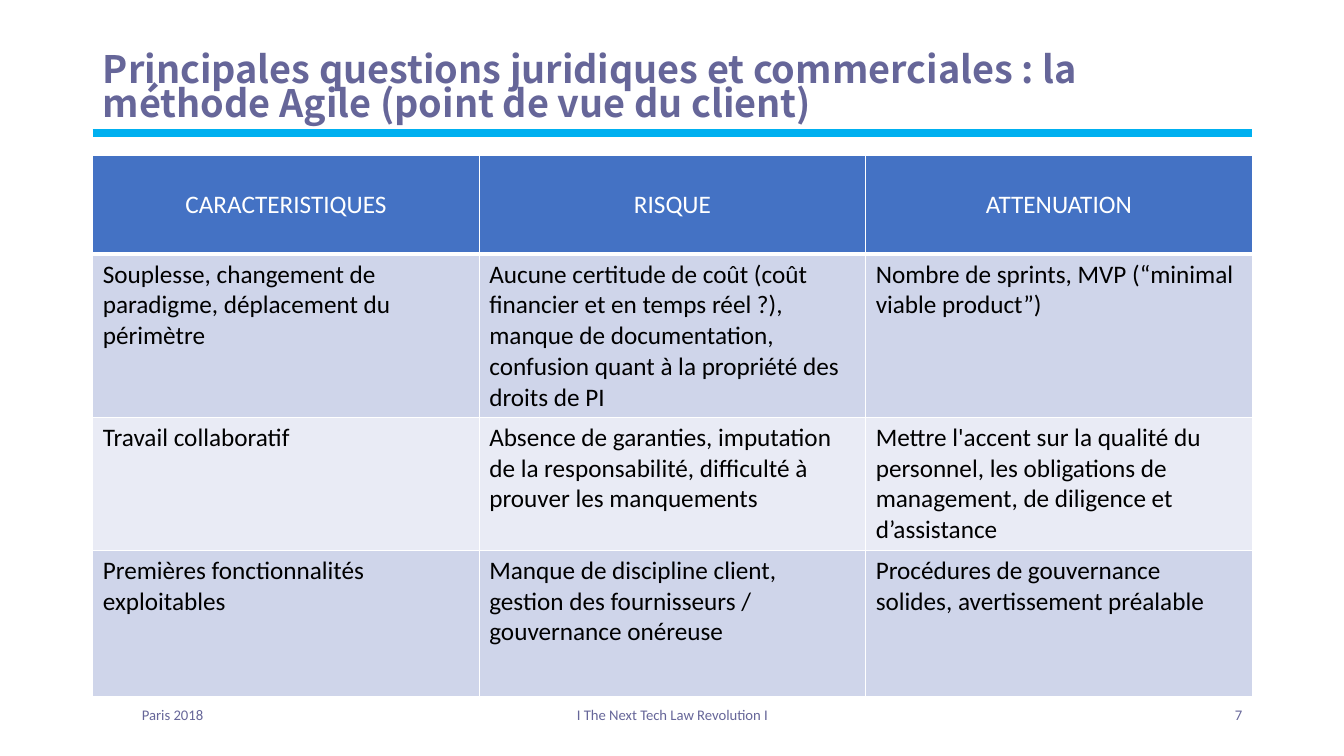
from dataclasses import dataclass

from lxml.etree import SubElement
from pptx import Presentation
from pptx.dml.color import RGBColor
from pptx.enum.shapes import MSO_CONNECTOR
from pptx.enum.text import MSO_ANCHOR, MSO_AUTO_SIZE, PP_ALIGN
from pptx.oxml.ns import qn
from pptx.slide import Slide
from pptx.table import _Cell as Cell
from pptx.text.text import _Paragraph as Paragraph
from pptx.util import Inches, Pt


@dataclass(frozen=True)
class Theme:
    title_font: str = "Noto Sans CJK KR"
    body_font: str = "Calibri"
    title_size: float = 27
    table_size: float = 18
    footer_size: float = 10.5
    accent: str = "666699"
    rule: str = "00B0F0"
    header: str = "4472C4"
    bands: tuple[str, str] = ("CFD5EA", "E9EBF5")
    white: str = "FFFFFF"
    black: str = "000000"


@dataclass(frozen=True)
class Footer:
    text: str
    left: float
    width: float
    alignment: PP_ALIGN


THEME = Theme()
LEFT, WIDTH = 0.92, 11.5
RULE_TOP, TABLE_TOP, FOOTER_TOP = 1.32, 1.54, 6.95
ROW_HEIGHTS = (0.98, 1.62, 1.32, 1.45)
TITLE = ("Principales questions juridiques et commerciales : la méthode Agile "
         "(point de vue du client)")
ROWS = (
    ("CARACTERISTIQUES", "RISQUE", "ATTENUATION"),
    ("Souplesse, changement de paradigme, déplacement du périmètre",
     "Aucune certitude de coût (coût financier et en temps réel ?), manque de "
     "documentation, confusion quant à la propriété des droits de PI",
     "Nombre de sprints, MVP (“minimal viable product”)"),
    ("Travail collaboratif",
     "Absence de garanties, imputation de la responsabilité, difficulté à "
     "prouver les manquements",
     "Mettre l'accent sur la qualité du personnel, les obligations de "
     "management, de diligence et d’assistance"),
    ("Premières fonctionnalités exploitables",
     "Manque de discipline client, gestion des fournisseurs / gouvernance onéreuse",
     "Procédures de gouvernance solides, avertissement préalable"),
)
FOOTERS = (
    Footer("Paris 2018", 1.31, 2.6, PP_ALIGN.LEFT),
    Footer("I The Next Tech Law Revolution I", 4.42, 4.5, PP_ALIGN.CENTER),
    Footer("7", 9.42, 3, PP_ALIGN.RIGHT),
)


def format_paragraph(paragraph: Paragraph, font: str, size: float, color: str,
                     alignment: PP_ALIGN = PP_ALIGN.LEFT, bold: bool = False) -> None:
    paragraph.alignment = alignment
    for run in paragraph.runs:
        run.font.name = font
        run.font.size = Pt(size)
        run.font.bold = bold
        run.font.color.rgb = RGBColor.from_string(color)


def add_title(slide: Slide) -> None:
    title = slide.shapes.title
    title.left, title.top = Inches(LEFT), Inches(0.46)
    title.width, title.height = Inches(WIDTH), Inches(0.88)
    frame = title.text_frame
    frame.text = TITLE
    frame.word_wrap = True
    frame.auto_size = MSO_AUTO_SIZE.NONE
    frame.vertical_anchor = MSO_ANCHOR.MIDDLE
    paragraph = frame.paragraphs[0]
    paragraph.line_spacing = 0.75
    format_paragraph(paragraph, THEME.title_font, THEME.title_size, THEME.accent, bold=True)


def add_title_rule(slide: Slide) -> None:
    """Draw the rule behind the title, whose descenders overlap it."""
    rule = slide.shapes.add_connector(
        MSO_CONNECTOR.STRAIGHT, Inches(LEFT), Inches(RULE_TOP),
        Inches(LEFT + WIDTH), Inches(RULE_TOP))
    rule.line.color.rgb = RGBColor.from_string(THEME.rule)
    rule.line.width = Pt(6)
    SubElement(rule.element.spPr, qn("a:effectLst"))
    slide.shapes.title.element.addprevious(rule.element)


def set_borders(cell: Cell, top: float, bottom: float) -> None:
    """Add white borders ahead of the cell fill, as the schema requires."""
    properties = cell._tc.get_or_add_tcPr()
    widths = {"a:lnL": 1, "a:lnR": 1, "a:lnT": top, "a:lnB": bottom}
    for position, (tag, width) in enumerate(widths.items()):
        line = SubElement(properties, qn(tag), w=str(Pt(width)))
        fill = SubElement(line, qn("a:solidFill"))
        SubElement(fill, qn("a:srgbClr"), val=THEME.white)
        properties.insert(position, line)


def add_risk_table(slide: Slide) -> None:
    table = slide.shapes.add_table(
        len(ROWS), len(ROWS[0]), Inches(LEFT), Inches(TABLE_TOP),
        Inches(WIDTH), Inches(sum(ROW_HEIGHTS))).table
    for row_index, (texts, height) in enumerate(zip(ROWS, ROW_HEIGHTS)):
        table.rows[row_index].height = Inches(height)
        is_header = row_index == 0
        fill = THEME.header if is_header else THEME.bands[(row_index - 1) % 2]
        for column_index, text in enumerate(texts):
            cell = table.cell(row_index, column_index)
            cell.text_frame.text = text
            cell.vertical_anchor = MSO_ANCHOR.MIDDLE if is_header else MSO_ANCHOR.TOP
            cell.fill.solid()
            cell.fill.fore_color.rgb = RGBColor.from_string(fill)
            set_borders(cell, top=3 if row_index == 1 else 1, bottom=3 if is_header else 1)
            format_paragraph(
                cell.text_frame.paragraphs[0], THEME.body_font, THEME.table_size,
                THEME.white if is_header else THEME.black,
                PP_ALIGN.CENTER if is_header else PP_ALIGN.LEFT)


def add_footer(slide: Slide, footer: Footer) -> None:
    box = slide.shapes.add_textbox(
        Inches(footer.left), Inches(FOOTER_TOP), Inches(footer.width), Inches(0.4))
    box.text_frame.word_wrap = True
    box.text_frame.text = footer.text
    format_paragraph(box.text_frame.paragraphs[0], THEME.body_font,
                     THEME.footer_size, THEME.accent, footer.alignment)


def main() -> None:
    presentation = Presentation()
    presentation.slide_width, presentation.slide_height = Inches(13.33), Inches(7.5)
    slide = presentation.slides.add_slide(presentation.slide_layouts[5])
    add_title(slide)
    add_title_rule(slide)
    for footer in FOOTERS:
        add_footer(slide, footer)
    add_risk_table(slide)
    presentation.save("out.pptx")


if __name__ == "__main__":
    main()
